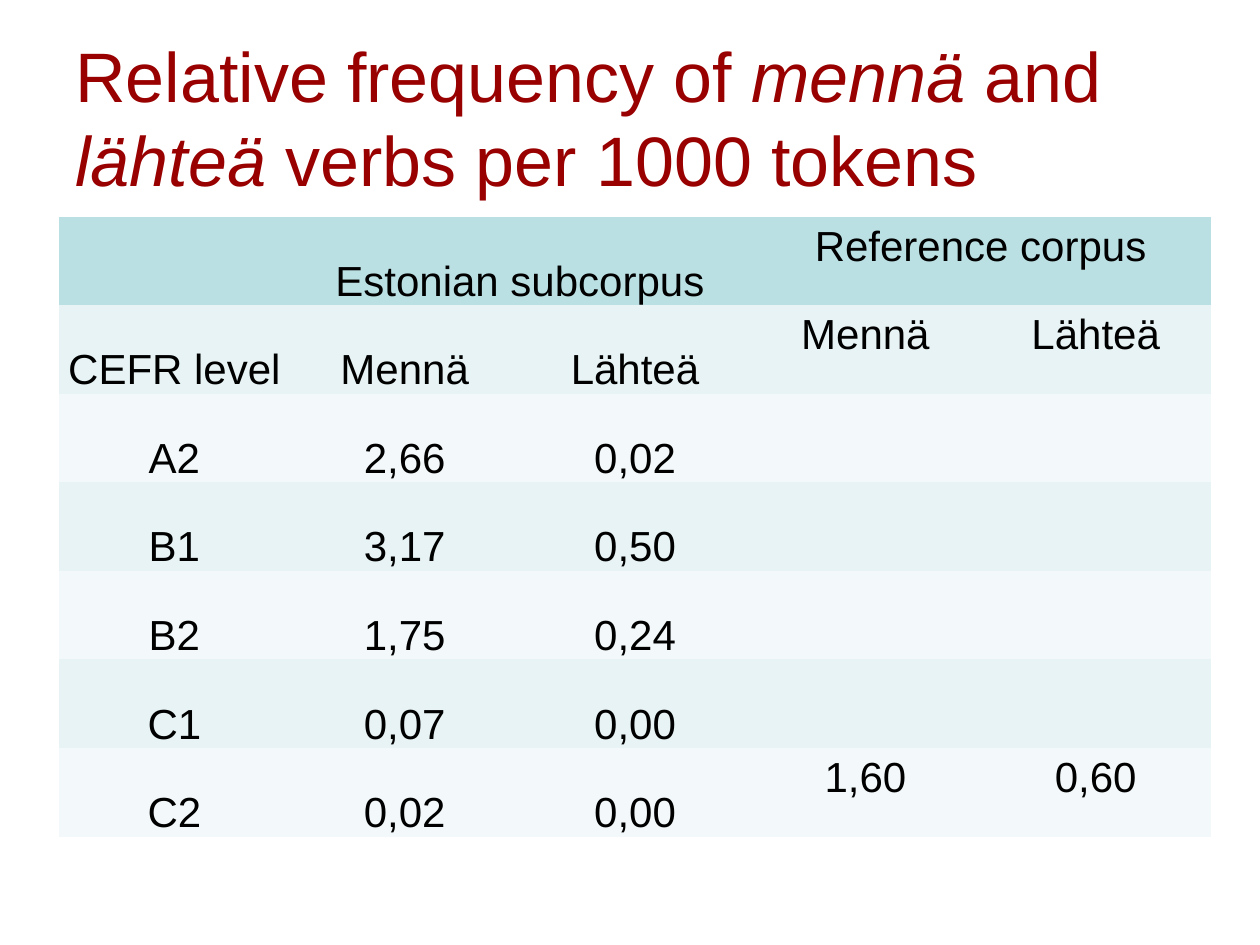
from pptx import Presentation
from pptx import util as u
from pptx.dml.color import RGBColor
from pptx.enum import text
from pptx.oxml.ns import qn

TITLE = [  # (words, italic)
    ("Relative frequency of ", False),
    ("mennä", True),
    (" and ", False),
    ("lähteä ", True),
    ("verbs per 1000 tokens", False),
]
ROWS = [
    ["", "Estonian subcorpus", "", "Reference corpus", ""],
    ["CEFR level", "Mennä", "Lähteä", "Mennä", "Lähteä"],
    ["A2", "2,66", "0,02", "", ""],
    ["B1", "3,17", "0,50", "", ""],
    ["B2", "1,75", "0,24", "", ""],
    ["C1", "0,07", "0,00", "", ""],
    ["C2", "0,02", "0,00", "1,60", "0,60"],
]
HEADER_SPANS = [(1, 2), (3, 4)]
REFERENCE_COLUMN = 3  # first column of the reference corpus

THEME = {
    "font": "Arial",
    "title": {"size": 40, "color": "990000"},
    "body": {"size": 24, "color": "000000"},
    "header": "BBE0E3",
    "bands": ["E7F3F4", "F3F9FA"],
    "table_style": "{2D5ABB26-0587-4C30-8999-92F81FD0307C}",  # no style, no grid
}
SUBCORPUS_CELL = {
    "vertical_anchor": text.MSO_ANCHOR.BOTTOM,
    "margin_left": u.Inches(0.01), "margin_top": u.Inches(0.03),
    "margin_right": u.Inches(0.01), "margin_bottom": 0,
}
REFERENCE_CELL = {
    "vertical_anchor": text.MSO_ANCHOR.TOP,
    "margin_left": u.Inches(0.1), "margin_top": u.Inches(0.07),
    "margin_right": u.Inches(0.1), "margin_bottom": u.Inches(0.05),
}
TITLE_FRAME = {"word_wrap": True, "vertical_anchor": text.MSO_ANCHOR.MIDDLE}
CELL_PARAGRAPH = {"alignment": text.PP_ALIGN.CENTER, "line_spacing": 0.95}
TITLE_AREA = (0.5, 0.21, 9, 1.43)
TABLE_AREA = (0.47, 1.72, 9.14, 4.92)


def assign(target, values):
    for name, value in values.items():
        setattr(target, name, value)


def style_font(font, role, italic=False):
    look = THEME[role]
    assign(font, {"name": THEME["font"], "size": u.Pt(look["size"]), "italic": italic})
    font.color.rgb = RGBColor.from_string(look["color"])


def add_title(page):
    box = page.shapes.add_textbox(*map(u.Inches, TITLE_AREA))
    assign(box.text_frame, TITLE_FRAME)
    para = box.text_frame.paragraphs[0]
    for words, italic in TITLE:
        span = para.add_run()
        span.text = words
        style_font(span.font, "title", italic)


def fill_cell(cell, words, row, column):
    color = THEME["bands"][(row - 1) % 2] if row else THEME["header"]
    cell.fill.solid()
    cell.fill.fore_color.rgb = RGBColor.from_string(color)
    if words:
        assign(cell, REFERENCE_CELL if column >= REFERENCE_COLUMN else SUBCORPUS_CELL)
        para = cell.text_frame.paragraphs[0]
        assign(para, CELL_PARAGRAPH)
        span = para.add_run()
        span.text = words
        style_font(span.font, "body")


def add_frequency_table(page):
    frame = page.shapes.add_table(len(ROWS), len(ROWS[0]), *map(u.Inches, TABLE_AREA))
    table = frame.table
    table._tbl.tblPr.find(qn("a:tableStyleId")).text = THEME["table_style"]
    for row, entries in enumerate(ROWS):
        for column, words in enumerate(entries):
            fill_cell(table.cell(row, column), words, row, column)
    for first, last in HEADER_SPANS:
        table.cell(0, first).merge(table.cell(0, last))


def main():
    deck = Presentation()
    deck.slide_width, deck.slide_height = u.Inches(10), u.Inches(7.5)
    page = deck.slides.add_slide(deck.slide_layouts[6])
    add_title(page)
    add_frequency_table(page)
    deck.save("out.pptx")


if __name__ == "__main__":
    main()
